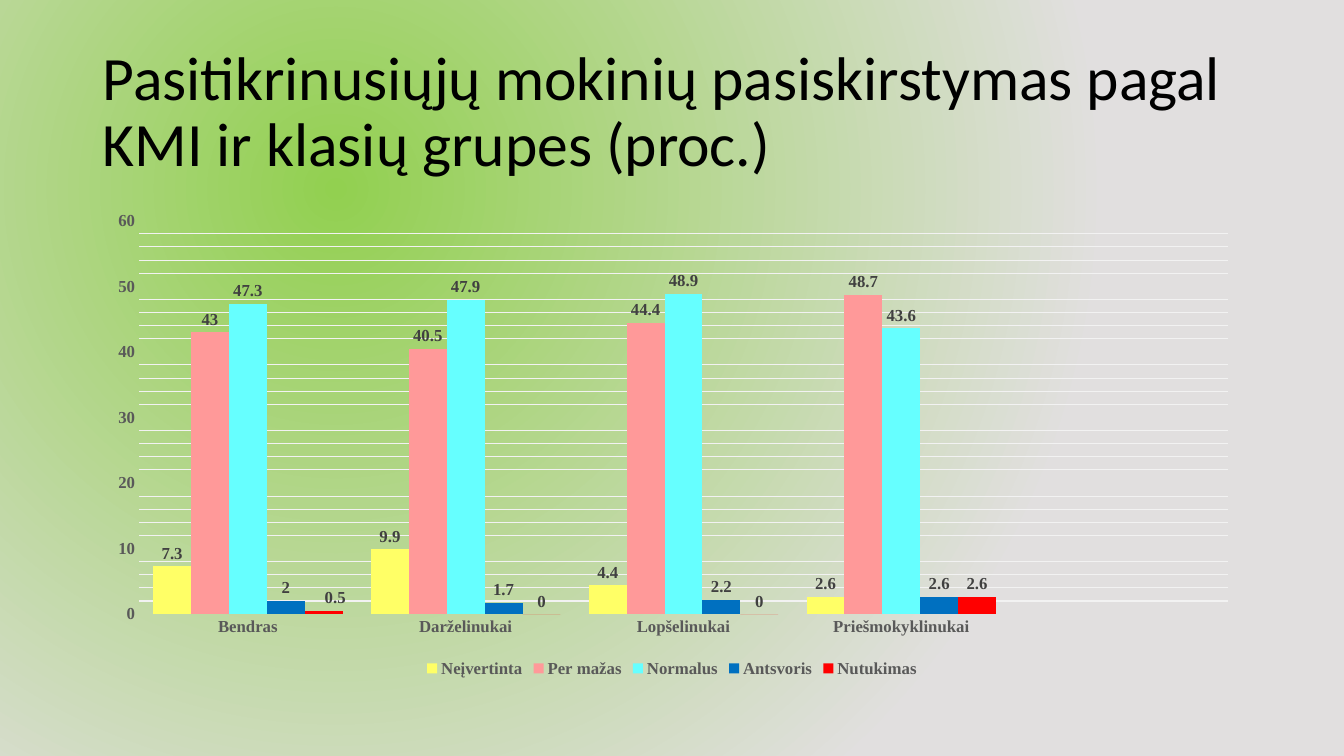
from dataclasses import dataclass

from pptx import Presentation
from pptx.chart.data import CategoryChartData
from pptx.dml.color import RGBColor
from pptx.enum.chart import XL_CHART_TYPE, XL_LABEL_POSITION, XL_LEGEND_POSITION, XL_TICK_MARK
from pptx.enum.text import MSO_ANCHOR, MSO_AUTO_SIZE, PP_ALIGN
from pptx.oxml import parse_xml
from pptx.oxml.ns import nsdecls, qn
from pptx.util import Inches, Pt


@dataclass(frozen=True)
class Theme:
    """Colours, fonts and type sizes of the slide."""
    glow: str = "92D050"
    backdrop: str = "E1DFDF"
    title: str = "000000"
    axis: str = "595959"
    label: str = "404040"
    grid: str = "F2F2F2"
    title_font: str = "Calibri"
    chart_font: str = "Times New Roman"
    title_size: int = 44
    chart_size: int = 12
    grid_width: float = 0.75


TITLE = "Pasitikrinusiųjų mokinių pasiskirstymas pagal KMI ir klasių grupes (proc.)"
GROUPS = ["Bendras", "Darželinukai", "Lopšelinukai", "Priešmokyklinukai", ""]
BMI_SERIES = [
    ("Neįvertinta", "FFFF66", (7.3, 9.9, 4.4, 2.6, None)),
    ("Per mažas", "FF9999", (43, 40.5, 44.4, 48.7, None)),
    ("Normalus", "66FFFF", (47.3, 47.9, 48.9, 43.6, None)),
    ("Antsvoris", "0070C0", (2, 1.7, 2.2, 2.6, None)),
    ("Nutukimas", "FF0000", (0.5, 0, 0, 2.6, None)),
]


def apply(target, values):
    """Set each named attribute of the target."""
    for name, value in values.items():
        setattr(target, name, value)


def manual_layout(**values):
    """Return a chart layout element with the given settings."""
    items = "".join(f'<c:{name} val="{value}"/>' for name, value in values.items())
    return parse_xml(f'<c:layout {nsdecls("c")}><c:manualLayout>{items}</c:manualLayout></c:layout>')


class SlideBuilder:
    """Draws themed elements on the current slide by grid columns and rows."""
    columns = 29
    rows = 75

    def __init__(self, deck, theme):
        """Add a title-only slide to the deck."""
        self.deck = deck
        self.theme = theme
        self.page = deck.slides.add_slide(deck.slide_layouts[5])

    def place(self, column, row, width, height):
        """Turn grid units into a position and size."""
        across = self.deck.slide_width / self.columns
        down = self.deck.slide_height / self.rows
        return {"left": round(column * across), "top": round(row * down),
                "width": round(width * across), "height": round(height * down)}

    def style_font(self, font, color, size, name, bold):
        """Give a font its colour, size, face and weight."""
        apply(font, {"size": Pt(size), "name": name, "bold": bold})
        font.color.rgb = RGBColor.from_string(color)

    def style_chart_font(self, font, color):
        """Give a chart font the shared chart style."""
        self.style_font(font, color, self.theme.chart_size, self.theme.chart_font, True)

    def background(self):
        """Fill the background with a round glow."""
        fill = self.page.background.fill
        fill.gradient()
        for stop, color in zip(fill.gradient_stops, (self.theme.glow, self.theme.backdrop)):
            stop.color.rgb = RGBColor.from_string(color)
        gradient = self.page.element.find(".//" + qn("a:gradFill"))
        glow = parse_xml(f'<a:path {nsdecls("a")} path="circle">'
                         '<a:fillToRect l="50000" t="50000" r="100000" b="100000"/></a:path>')
        gradient.replace(gradient.find(qn("a:lin")), glow)

    def title(self, text, *area):
        """Place and format the title."""
        box = self.page.shapes.title
        apply(box, self.place(*area))
        frame = box.text_frame
        frame.text = text
        apply(frame, {"word_wrap": True, "auto_size": MSO_AUTO_SIZE.NONE,
                      "vertical_anchor": MSO_ANCHOR.MIDDLE})
        para = frame.paragraphs[0]
        apply(para, {"alignment": PP_ALIGN.LEFT, "line_spacing": 0.9})
        self.style_font(para.runs[0].font, self.theme.title, self.theme.title_size,
                        self.theme.title_font, False)

    def column_chart(self, categories, series_rows, *area):
        """Add a clustered column chart with value labels."""
        data = CategoryChartData()
        data.categories = categories
        for name, _, values in series_rows:
            data.add_series(name, values)
        spot = self.place(*area)
        chart = self.page.shapes.add_chart(
            XL_CHART_TYPE.COLUMN_CLUSTERED, spot["left"], spot["top"],
            spot["width"], spot["height"], data).chart
        self.style_chart_font(chart.font, self.theme.axis)
        apply(chart, {"has_title": False, "has_legend": True})
        apply(chart.legend, {"position": XL_LEGEND_POSITION.BOTTOM, "include_in_layout": False})
        self.style_chart_font(chart.legend.font, self.theme.axis)
        plot = chart.plots[0]
        apply(plot, {"gap_width": 75, "overlap": 0, "vary_by_categories": False})
        for series, (_, color, _) in zip(plot.series, series_rows):
            series.format.fill.solid()
            series.format.fill.fore_color.rgb = RGBColor.from_string(color)
            labels = series.data_labels
            apply(labels, {"show_value": True, "position": XL_LABEL_POSITION.OUTSIDE_END})
            self.style_chart_font(labels.font, self.theme.label)
        self.axes(chart)
        plot_area = chart.element.find(".//" + qn("c:plotArea"))
        for layout in plot_area.findall(qn("c:layout")):
            plot_area.remove(layout)
        plot_area.insert(0, manual_layout(layoutTarget="inner", xMode="edge", yMode="edge",
                                          x=0.04, y=0.04, w=0.94, h=0.82))
        return chart

    def axes(self, chart):
        """Format both axes and the minor gridlines."""
        for axis in (chart.category_axis, chart.value_axis):
            apply(axis, {"major_tick_mark": XL_TICK_MARK.NONE, "minor_tick_mark": XL_TICK_MARK.NONE,
                         "has_major_gridlines": False})
            axis.format.line.fill.background()
            self.style_chart_font(axis.tick_labels.font, self.theme.axis)
        apply(chart.value_axis, {"minimum_scale": 0, "maximum_scale": 60, "major_unit": 10,
                                 "minor_unit": 2, "has_minor_gridlines": True})
        gridlines = chart.element.find(".//" + qn("c:minorGridlines"))
        gridlines.append(parse_xml(
            f'<c:spPr {nsdecls("c", "a")}><a:ln w="{Pt(self.theme.grid_width)}"><a:solidFill>'
            f'<a:srgbClr val="{self.theme.grid}"/></a:solidFill></a:ln></c:spPr>'))

    def shift_label(self, chart, series_index, point_index, shift):
        """Move one value label sideways by a share of the chart width."""
        label = chart.plots[0].series[series_index].points[point_index].data_label
        label.position = XL_LABEL_POSITION.OUTSIDE_END
        self.style_chart_font(label.font, self.theme.label)
        index = chart.element.find(".//" + qn("c:dLbl")).find(qn("c:idx"))
        index.addnext(manual_layout(x=shift, y=0))


def main():
    """Build and save the slide."""
    deck = Presentation()
    apply(deck, {"slide_width": Inches(13.33), "slide_height": Inches(7.5)})
    builder = SlideBuilder(deck, Theme())
    builder.background()
    builder.title(TITLE, 2, 4, 25, 14.5)
    chart = builder.column_chart(GROUPS, BMI_SERIES, 2, 20, 25, 47.6)
    builder.shift_label(chart, len(BMI_SERIES) - 1, 0, 0.01)
    deck.save("out.pptx")


if __name__ == "__main__":
    main()
